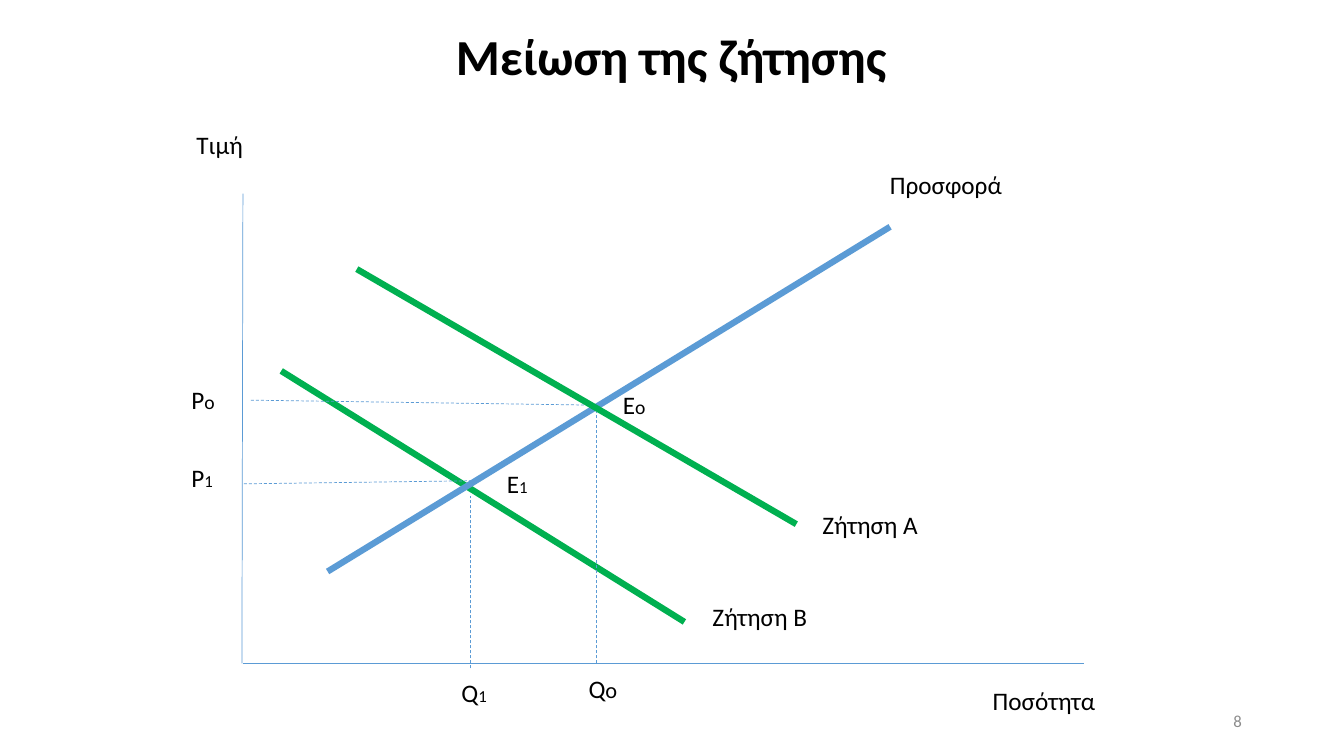
from lxml.etree import SubElement
from pptx import Presentation
from pptx.dml.color import RGBColor
from pptx.enum.dml import MSO_LINE
from pptx.enum.shapes import MSO_CONNECTOR
from pptx.enum.text import MSO_ANCHOR, MSO_AUTO_SIZE, PP_ALIGN
from pptx.oxml.ns import qn
from pptx.util import Inches, Pt

theme = {
    "font": "Calibri",
    "ink": RGBColor(0, 0, 0),
    "gray": RGBColor(0x8C, 0x8C, 0x8C),
    "blue": RGBColor(0x5B, 0x9B, 0xD5),
    "green": RGBColor(0, 0xB0, 0x50),
    "title": Pt(36),
    "label": Pt(18),
    "page": Pt(12),
    "thin": Pt(0.5),
    "thick": Pt(4.5),
}
cell = Inches(0.1)
cols, rows = 133.33, 75


def grid(*spots):
    return [round(spot * cell) for spot in spots]


def write(shape, parts, frame, para, tone="ink", bold=False):
    text = shape.text_frame
    for key, value in frame.items():
        setattr(text, key, value)
    line = text.paragraphs[0]
    for key, value in para.items():
        setattr(line, key, value)
    for word, size in parts:
        run = line.add_run()
        run.text = word
        for key, value in {"name": theme["font"], "size": size, "bold": bold}.items():
            setattr(run.font, key, value)
        run.font.color.rgb = theme[tone]


deck = Presentation()
deck.slide_width, deck.slide_height = grid(cols, rows)
slide = deck.slides.add_slide(deck.slide_layouts[5])
shapes = slide.shapes

title = shapes.title
title.left, title.top, title.width, title.height = grid(23.5, 2.5, 86.2, 6.8)
middle = {
    "word_wrap": True,
    "auto_size": MSO_AUTO_SIZE.NONE,
    "vertical_anchor": MSO_ANCHOR.MIDDLE,
}
write(title, [("Μείωση της ζήτησης", theme["title"])], middle,
      {"alignment": PP_ALIGN.CENTER, "line_spacing": 0.9}, bold=True)

page = shapes.add_textbox(*grid(94.2, 69.5, 30, 4))
write(page, [("8", theme["page"])], middle, {"alignment": PP_ALIGN.RIGHT}, "gray")

left, base = 24.1, 65.8
first, last = 46.7, 59.2
solid, dash = MSO_LINE.SOLID, MSO_LINE.DASH
lines = [
    (left, 19.2, left - 0.1, base, "blue", "thin", solid),
    (107.5, base, left, base, "blue", "thin", solid),
    (27.9, 36.8, 67.9, 61.7, "green", "thick", solid),
    (32.5, 56.7, 88.3, 22.5, "blue", "thick", solid),
    (24.9, 39.7, last, 40.2, "blue", "thin", dash),
    (last, base, last, 40.9, "blue", "thin", dash),
    (24.2, 48, first, 47.7, "blue", "thin", dash),
    (first, 66.3, first, 49.2, "blue", "thin", dash),
    (35.4, 26.7, 79, 52, "green", "thick", solid),
]
for *ends, tone, width, style in lines:
    line = shapes.add_connector(MSO_CONNECTOR.STRAIGHT, *grid(*ends))
    line.line.color.rgb = theme[tone]
    for key, value in {"width": theme[width], "dash_style": style}.items():
        setattr(line.line, key, value)
    SubElement(line._element.spPr, qn("a:effectLst"))

labels = [
    (18.5, 12.3, 11.2, "Τιμή", "", 0),
    (97.5, 67.5, 15.6, "Ποσότητα", "", 0),
    (87.3, 16.3, 18.5, "Προσφορά", "", 0),
    (80.6, 50, 16.1, "Ζήτηση Α", "", 0),
    (69.7, 59.2, 17.6, "Ζήτηση Β", "", 0),
    (18, 37.6, 4.4, "P", "o", 14),
    (57.4, 66.3, 4.9, "Q", "o", 16),
    (60.8, 38.1, 4.3, "E", "o", 14),
    (18, 45.4, 4.2, "P", "1", 12),
    (44.8, 66.7, 4.6, "Q", "1", 12),
    (49.3, 46, 4.1, "E", "1", 12),
]
for x, y, width, word, mark, size in labels:
    box = shapes.add_textbox(*grid(x, y, width, 4))
    parts = [(word, theme["label"])] + ([(mark, Pt(size))] if mark else [])
    write(box, parts, {"word_wrap": not mark, "auto_size": MSO_AUTO_SIZE.SHAPE_TO_FIT_TEXT}, {})

deck.save("out.pptx")
